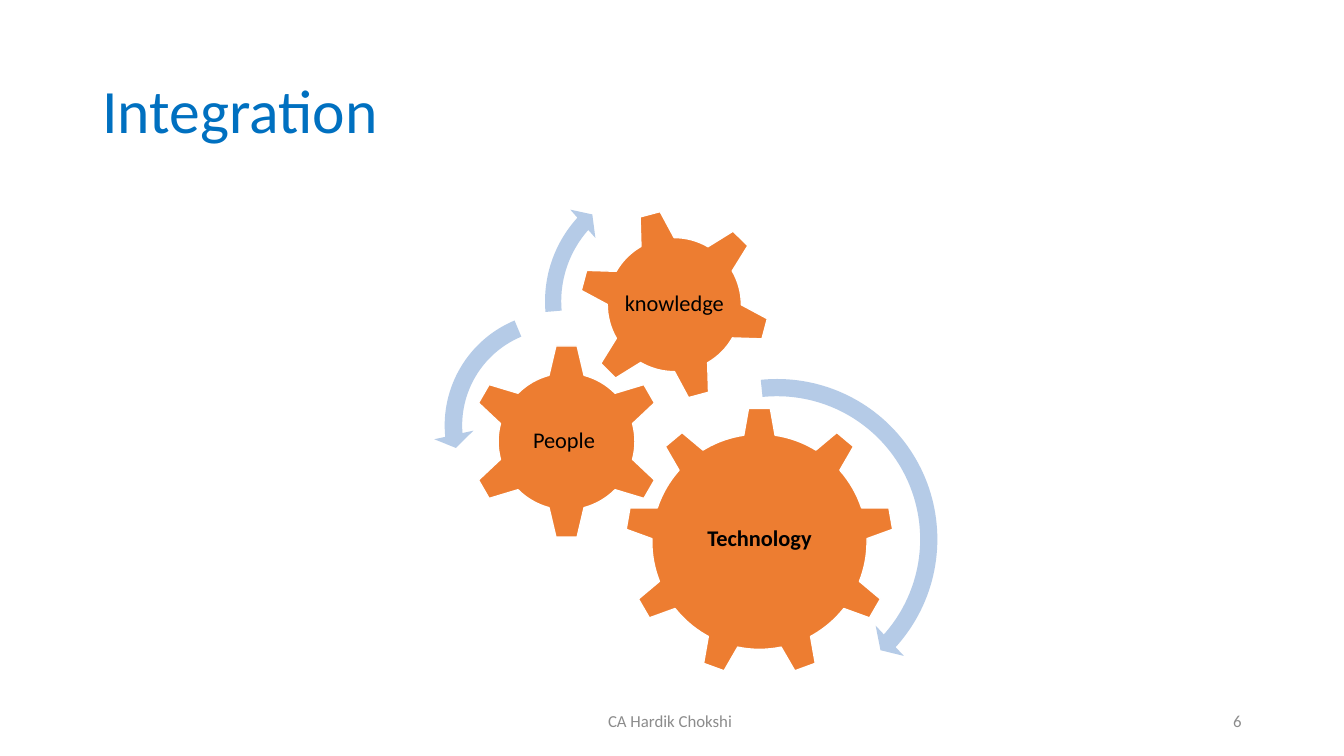
from dataclasses import dataclass

from pptx import Presentation
from pptx import util as u
from pptx.dml.color import RGBColor
from pptx.enum import shapes, text

Kind = shapes.MSO_SHAPE
Align = text.PP_ALIGN


@dataclass(frozen=True)
class Theme:
    font: str = "Calibri"
    title: str = "0070C0"
    muted: str = "8C8C8C"
    ink: str = "000000"
    gear: str = "ED7D31"
    edge: str = "FFFFFF"
    arrow: str = "B5CBE7"
    head: int = 44
    label: int = 16
    foot: int = 12


def square(x, y, size):
    return [u.Pt(v) for v in (x - size / 2, y - size / 2, size, size)]


class Deck:
    def __init__(self, theme):
        self.theme = theme
        self.prs = Presentation()
        self.prs.slide_width, self.prs.slide_height = u.Pt(960), u.Pt(540)
        self.slide = self.prs.slides.add_slide(self.prs.slide_layouts[5])
        self.group = self.slide.shapes.add_group_shape()

    def label(self, shape, words, size, color, align, bold=False, space=None):
        frame = shape.text_frame
        frame.word_wrap = True
        frame.vertical_anchor = text.MSO_ANCHOR.MIDDLE
        para = frame.paragraphs[0]
        para.alignment = align
        if space:
            para.line_spacing = space
        run = para.add_run()
        run.text = words
        font = run.font
        font.name, font.size, font.bold = self.theme.font, u.Pt(size), bold
        font.color.rgb = RGBColor.from_string(color)

    def title(self, words, box):
        shape = self.slide.shapes.title
        shape.left, shape.top, shape.width, shape.height = map(u.Pt, box)
        self.label(shape, words, self.theme.head, self.theme.title,
                   Align.LEFT, space=0.9)

    def footer(self, words, box, align):
        shape = self.slide.shapes.add_textbox(*map(u.Pt, box))
        self.label(shape, words, self.theme.foot, self.theme.muted, align)

    def solid(self, kind, x, y, size, color):
        shape = self.group.shapes.add_shape(kind, *square(x, y, size))
        shape.shadow.inherit = False
        shape.fill.solid()
        shape.fill.fore_color.rgb = RGBColor.from_string(color)
        shape.line.fill.background()
        return shape

    def gear(self, kind, x, y, size, words, width, turn=0, lift=0, bold=False):
        gear = self.solid(kind, x, y, size, self.theme.gear)
        gear.rotation = turn
        gear.line.color.rgb = RGBColor.from_string(self.theme.edge)
        gear.line.width = u.Pt(1)
        box = self.group.shapes.add_textbox(*square(x, y - lift, width))
        frame = box.text_frame
        frame.margin_left = frame.margin_right = u.Pt(1.5)
        frame.margin_top = frame.margin_bottom = u.Pt(1.5)
        self.label(box, words, self.theme.label, self.theme.ink,
                   Align.CENTER, bold, 0.9)

    def arrow(self, kind, x, y, size, bends):
        shape = self.solid(kind, x, y, size, self.theme.arrow)
        for i, bend in enumerate(bends):
            shape.adjustments[i] = bend

    def save(self):
        self.prs.save("out.pptx")


def main():
    deck = Deck(Theme())
    deck.title("Integration", (66, 28.75, 828, 104.4))
    deck.footer("CA Hardik Chokshi ", (318, 500.5, 324, 28.75), Align.CENTER)
    deck.footer("6", (678, 500.5, 216, 28.75), Align.RIGHT)

    deck.gear(Kind.GEAR_9, 542.5, 387, 192.2, "Technology", 115,
              lift=1.5, bold=True)
    deck.gear(Kind.GEAR_6, 404.7, 315.4, 139.7, "People ", 69)
    deck.gear(Kind.GEAR_6, 481.7, 217.6, 136.8, "knowledge", 77, turn=345)

    deck.arrow(Kind.CIRCULAR_ARROW, 555.1, 385.2, 246.2,
               (0.05, 2.99, 25.22, 158.49, 0.06))
    deck.arrow(Kind.LEFT_CIRCULAR_ARROW, 398.9, 303.9, 178.6,
               (0.07, 4.3, 104.89, 148.38, 0.08))
    deck.arrow(Kind.CIRCULAR_ARROW, 478.1, 215.3, 193,
               (0.06, 3.94, 133.14, 105.08, 0.07))
    deck.save()


if __name__ == "__main__":
    main()
